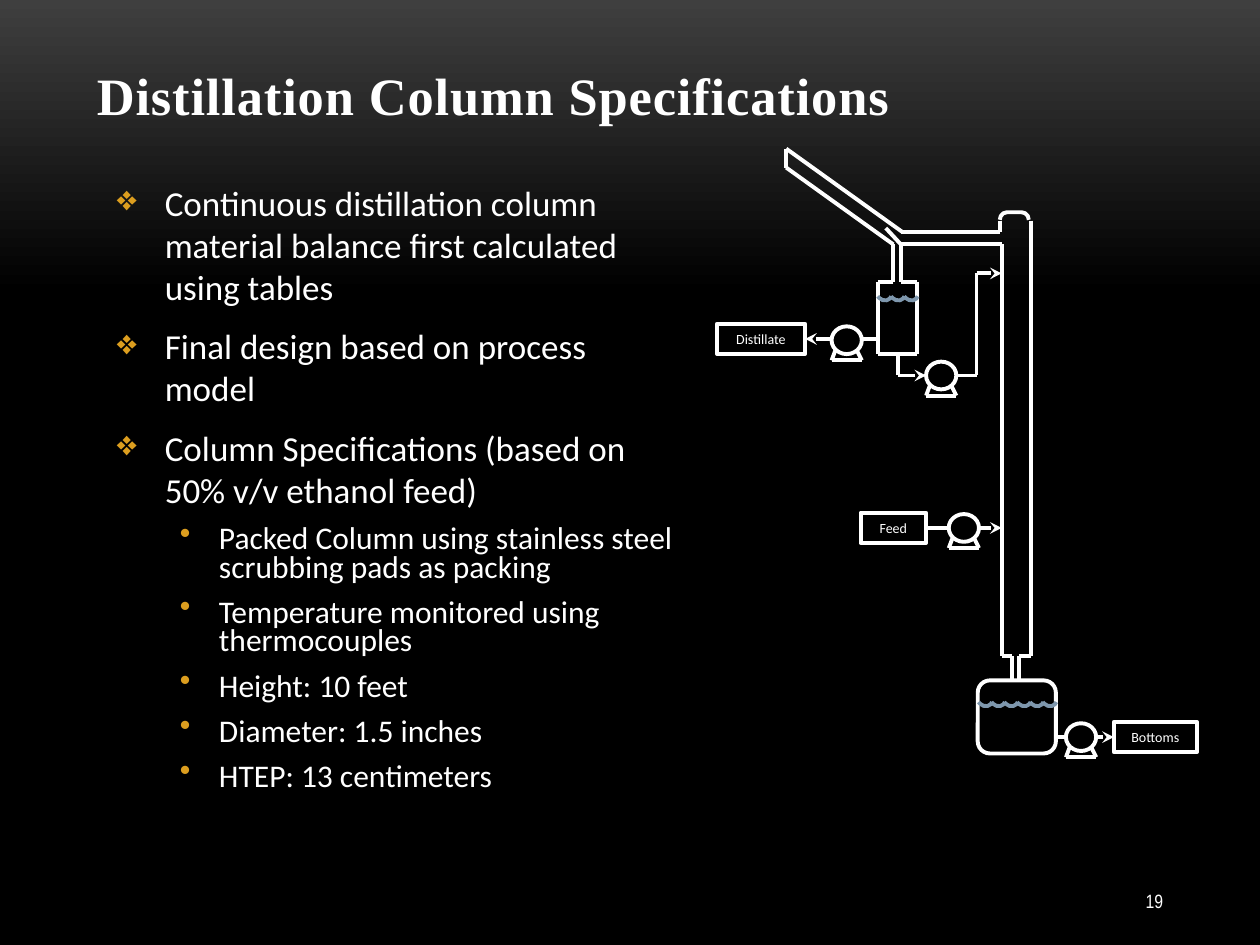
from copy import deepcopy
from dataclasses import dataclass
from itertools import pairwise

from lxml import etree
from pptx import Presentation
from pptx.dml.color import RGBColor
from pptx.oxml.ns import qn
from pptx.util import Inches, Pt
from pptx.enum import shapes, text

COLUMNS, ROWS = 1000, 750
WIDTH, HEIGHT = Inches(10), Inches(7.5)
WHITE, BLACK, GOLD, LIQUID = "FFFFFF", "000000", "DC9E1F", "7E97AD"
RIGHT_SIDE, LEFT_SIDE = 3, 1


@dataclass(frozen=True)
class Pump:
    left: float
    top: float


@dataclass(frozen=True)
class Label:
    wording: str
    left: float
    top: float
    width: float


@dataclass(frozen=True)
class Surface:
    left: float
    top: float
    ripples: int
    pitch: float


@dataclass(frozen=True)
class BulletStyle:
    mark: str
    size: float
    indent: float
    hanging: float
    before: float
    line_spacing: float


PIPES = [
    [(716, 184), (624, 118), (624, 133), (709, 194), (709, 224), (697, 224),
     (697, 281), (728, 281), (728, 224), (715, 224), (715, 194), (795, 194),
     (795, 521), (803, 521), (803, 540)],
    [(715, 184), (794, 184), (794, 175)],
    [(715, 194), (703, 181)],
    [(818, 175), (818, 521), (809, 521), (809, 540)],
    [(697, 269), (683, 269)],
    [(759, 298), (775, 298), (775, 217)],
    [(713, 281), (713, 298)],
    [(838, 585), (846, 585)],
]
FLOWS = [
    [(775, 217), (795, 217)],
    [(777, 419), (795, 419)],
    [(713, 298), (735, 298)],
]
PUMPS = [Pump(735, 287), Pump(660, 259), Pump(846, 574), Pump(753, 408)]
DISTILLATE = Label("Distillate", 569, 257, 70)
FEED = Label("Feed", 683, 407, 52)
BOTTOMS = Label("Bottoms", 884, 573, 66)
SURFACES = [Surface(696, 226, 3, 10.5), Surface(776, 548, 6, 10.2)]

MAIN = BulletStyle("❖", 20, 38, 38, 4, 1)
DETAIL = BulletStyle("•", 18, 81, 31, 3.6, 0.75)
BULLETS = [
    (MAIN, "Continuous distillation column material balance first calculated using tables"),
    (MAIN, "Final design based on process model"),
    (MAIN, "Column Specifications (based on 50% v/v ethanol feed)"),
    (DETAIL, "Packed Column using stainless steel scrubbing pads as packing"),
    (DETAIL, "Temperature monitored using thermocouples"),
    (DETAIL, "Height: 10 feet"),
    (DETAIL, "Diameter: 1.5 inches"),
    (DETAIL, "HTEP: 13 centimeters"),
]


def across(columns: float) -> int:
    return round(WIDTH * columns / COLUMNS)


def down(rows: float) -> int:
    return round(HEIGHT * rows / ROWS)


def color(value: str) -> RGBColor:
    return RGBColor.from_string(value)


def frame(left: float, top: float, width: float, height: float) -> tuple:
    return across(left), down(top), across(width), down(height)


def set_font(paragraph, name: str, size: float, bold: bool = False) -> None:
    font = paragraph.font
    font.name, font.size, font.bold = name, Pt(size), bold
    font.color.rgb = color(WHITE)


def paint_background(slide) -> None:
    fill = slide.background.fill
    fill.gradient()
    fill.gradient_angle = 270
    stop_list = slide.element.xpath(".//a:gsLst")[0]
    while len(stop_list) < 3:
        stop_list.append(deepcopy(stop_list[-1]))
    for stop, (position, value) in zip(
            fill.gradient_stops, [(0, "3F3F3F"), (0.31, BLACK), (1, BLACK)]):
        stop.position = position
        stop.color.rgb = color(value)


def draw_line(group, start: tuple, end: tuple, arrow: bool = False):
    connector = group.shapes.add_connector(
        shapes.MSO_CONNECTOR.STRAIGHT,
        across(start[0]), down(start[1]), across(end[0]), down(end[1]))
    connector.line.color.rgb = color(WHITE)
    connector.line.width = Pt(2.25)
    if arrow:
        etree.SubElement(connector.line._get_or_add_ln(), qn("a:tailEnd"), type="stealth")
    etree.SubElement(connector._element.spPr, qn("a:effectLst"))
    return connector


def draw_path(group, points: list, arrow: bool = False) -> None:
    for start, end in pairwise(points):
        draw_line(group, start, end, arrow)


def draw_shape(group, kind, box: tuple, fill: str = "", line: str = WHITE,
               rotation: float = 0, adjustments: tuple = ()):
    shape = group.shapes.add_shape(kind, *frame(*box))
    shape.shadow.inherit = False
    shape.rotation = rotation
    if fill:
        shape.fill.solid()
        shape.fill.fore_color.rgb = color(fill)
    else:
        shape.fill.background()
    shape.line.color.rgb = color(line)
    shape.line.width = Pt(2.25)
    for index, value in enumerate(adjustments):
        shape.adjustments[index] = value
    return shape


def draw_pump(group, pump: Pump) -> None:
    left, top = pump.left, pump.top
    draw_shape(group, shapes.MSO_SHAPE.OVAL, (left, top, 24, 22), BLACK)
    draw_path(group, [(left + 3, top + 19), (left, top + 27),
                      (left + 24, top + 27), (left + 20, top + 19)])


def draw_label(group, label: Label):
    shape = draw_shape(group, shapes.MSO_SHAPE.RECTANGLE,
                       (label.left, label.top, label.width, 24))
    shape.text_frame.auto_size = text.MSO_AUTO_SIZE.SHAPE_TO_FIT_TEXT
    paragraph = shape.text_frame.paragraphs[0]
    paragraph.text = label.wording
    paragraph.alignment = text.PP_ALIGN.CENTER
    set_font(paragraph, "Calibri", 8)
    return shape


def draw_surface(group, surface: Surface) -> None:
    for ripple in range(surface.ripples):
        left = surface.left + ripple * surface.pitch
        draw_shape(group, shapes.MSO_SHAPE.ARC, (left, surface.top, 11, 13),
                   line=LIQUID, rotation=133.6, adjustments=(150.69, 10.5))


def draw_process(slide) -> None:
    group = slide.shapes.add_group_shape()
    for pipe in PIPES:
        draw_path(group, pipe)
    for flow in FLOWS:
        draw_path(group, flow, arrow=True)
    for pump in PUMPS:
        draw_pump(group, pump)
    distillate, feed, bottoms = (
        draw_label(group, label) for label in (DISTILLATE, FEED, BOTTOMS))
    draw_line(group, (660, 269), (639, 269), True).end_connect(distillate, RIGHT_SIDE)
    draw_line(group, (735, 419), (753, 419)).begin_connect(feed, RIGHT_SIDE)
    draw_line(group, (870, 585), (884, 585), True).end_connect(bottoms, LEFT_SIDE)
    draw_shape(group, shapes.MSO_SHAPE.LEFT_BRACKET, (802, 160, 6, 23),
               rotation=90, adjustments=(0.95,))
    draw_shape(group, shapes.MSO_SHAPE.ROUNDED_RECTANGLE, (776, 540, 62, 58), BLACK)
    for surface in SURFACES:
        draw_surface(group, surface)


def add_text(slide, box: tuple, anchor):
    text_frame = slide.shapes.add_textbox(*frame(*box)).text_frame
    text_frame.word_wrap = True
    text_frame.vertical_anchor = anchor
    return text_frame


def add_bullets(slide) -> None:
    text_frame = add_text(slide, (83, 139, 464, 509), text.MSO_ANCHOR.TOP)
    for index, (style, wording) in enumerate(BULLETS):
        paragraph = text_frame.add_paragraph() if index else text_frame.paragraphs[0]
        paragraph.text = wording
        paragraph.level = int(style is DETAIL)
        paragraph.line_spacing = style.line_spacing
        paragraph.space_before = Pt(style.before if index else 0)
        paragraph.space_after = Pt(6)
        properties = paragraph._p.get_or_add_pPr()
        properties.set("marL", str(across(style.indent)))
        properties.set("indent", str(-across(style.hanging)))
        bullet_color = etree.SubElement(properties, qn("a:buClr"))
        etree.SubElement(bullet_color, qn("a:srgbClr"), val=GOLD)
        etree.SubElement(properties, qn("a:buChar"), char=style.mark)
        set_font(paragraph, "Calibri", style.size)


def main() -> None:
    presentation = Presentation()
    presentation.slide_width, presentation.slide_height = WIDTH, HEIGHT
    slide = presentation.slides.add_slide(presentation.slide_layouts[6])
    paint_background(slide)

    title = add_text(slide, (67, 33, 867, 72), text.MSO_ANCHOR.BOTTOM).paragraphs[0]
    title.text = "Distillation Column Specifications"
    set_font(title, "Times New Roman", 30, bold=True)
    title.runs[0].font._element.set("spc", "50")

    draw_process(slide)
    add_bullets(slide)

    number = add_text(slide, (825, 695, 108, 40), text.MSO_ANCHOR.MIDDLE).paragraphs[0]
    number.text = "19"
    number.alignment = text.PP_ALIGN.RIGHT
    set_font(number, "Arial Narrow", 11)
    presentation.save("out.pptx")


if __name__ == "__main__":
    main()
